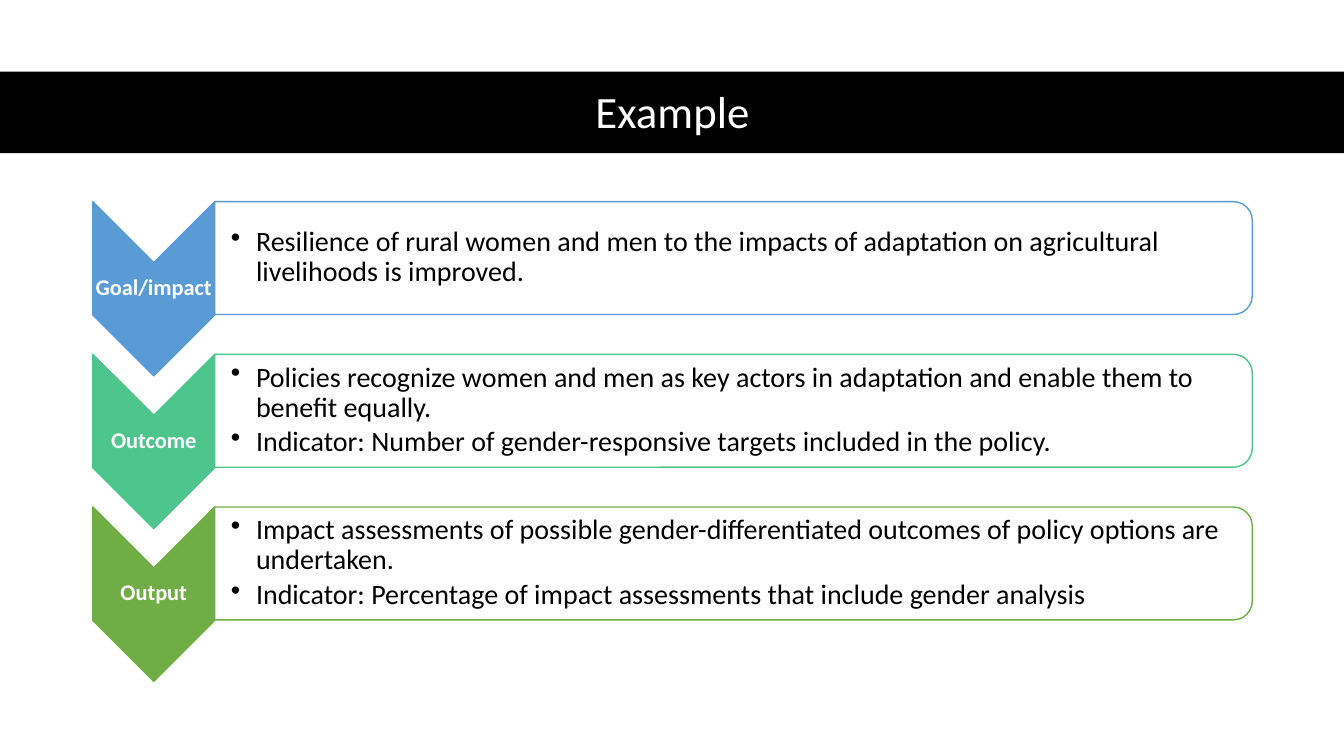
from dataclasses import dataclass

from lxml.etree import SubElement
from pptx import Presentation
from pptx.dml.color import RGBColor
from pptx.enum.shapes import MSO_SHAPE as Shape
from pptx.enum.text import MSO_ANCHOR as Anchor, PP_ALIGN as Align
from pptx.oxml.ns import qn
from pptx.util import Inches, Pt

COLORS = {
    "black": "000000",
    "white": "FFFFFF",
    "blue": "5B9BD5",
    "teal": "4DC58D",
    "green": "70AD47",
}
FONT = "Calibri"
TOP, PITCH = 2.0, 1.515
LEFT, ARROW_W, ARROW_H = 0.92, 1.21, 1.73
PANEL_W, PANEL_H = 10.29, 1.12


@dataclass
class Level:
    label: str
    color: str
    points: list[str]


LEVELS = [
    Level("Goal/impact", "blue", [
        "Resilience of rural women and men to the impacts of adaptation on "
        "agricultural livelihoods is improved.",
    ]),
    Level("Outcome", "teal", [
        "Policies recognize women and men as key actors in adaptation and "
        "enable them to benefit equally.",
        "Indicator: Number of gender-responsive targets included in the policy.",
    ]),
    Level("Output", "green", [
        "Impact assessments of possible gender-differentiated outcomes of "
        "policy options are undertaken.",
        "Indicator: Percentage of impact assessments that include gender analysis",
    ]),
]


def rgb(name: str) -> RGBColor:
    return RGBColor.from_string(COLORS[name])


def add_turned(slide, kind, left: float, top: float, width: float,
               height: float, fill: str, line: str):
    """Add a shape turned by 90 degrees that covers the given box."""
    mid_x, mid_y = left + width / 2, top + height / 2
    shape = slide.shapes.add_shape(
        kind, Inches(mid_x - height / 2), Inches(mid_y - width / 2),
        Inches(height), Inches(width))
    shape.rotation = 90
    shape.shadow.inherit = False
    shape.fill.solid()
    shape.fill.fore_color.rgb = rgb(fill)
    shape.line.color.rgb = rgb(line)
    shape.line.width = Pt(1)
    return shape


def add_text(slide, left: float, top: float, width: float, height: float,
             lines: list[str], size: int, color: str, inset: float = 0.01) -> list:
    box = slide.shapes.add_textbox(
        Inches(left), Inches(top), Inches(width), Inches(height))
    frame = box.text_frame
    frame.word_wrap = True
    frame.vertical_anchor = Anchor.MIDDLE
    frame.margin_left = Inches(inset)
    frame.margin_top = frame.margin_right = frame.margin_bottom = Inches(0.01)
    frame.text = "\n".join(lines)
    for para in frame.paragraphs:
        style(para, size, color)
    return list(frame.paragraphs)


def style(para, size: int, color: str) -> None:
    para.line_spacing = 0.9
    para.font.name = FONT
    para.font.size = Pt(size)
    para.font.color.rgb = rgb(color)


def add_bullet(para) -> None:
    para.space_after = Pt(3)
    props = para._p.get_or_add_pPr()
    props.set("marL", str(Inches(0.25)))
    props.set("indent", str(Inches(-0.25)))
    mark = props.makeelement(qn("a:buChar"), {"char": "•"})
    # Bullets come before the default run properties
    props.insert_element_before(mark, "a:tabLst", "a:defRPr", "a:extLst")


def add_level(slide, level: Level, top: float) -> None:
    # Arrow and its label
    add_turned(slide, Shape.CHEVRON, LEFT, top, ARROW_W, ARROW_H,
               level.color, level.color)
    label, = add_text(slide, LEFT, top + 0.6, ARROW_W, 0.52,
                      [level.label], 16, "white")
    label.alignment = Align.CENTER
    label.font.bold = True

    # Panel and its points
    right = LEFT + ARROW_W
    panel = add_turned(slide, Shape.ROUND_2_SAME_RECTANGLE, right, top,
                       PANEL_W, PANEL_H, "white", level.color)
    tint = panel.fill._xPr.find(qn("a:solidFill"))[0]
    SubElement(tint, qn("a:alpha"), val="90000")
    for para in add_text(slide, right, top + 0.05, 10.24, 1.01,
                         level.points, 20, "black", inset=0.16):
        add_bullet(para)


def add_title(slide) -> None:
    # Black band behind the title
    band = slide.shapes.add_shape(
        Shape.RECTANGLE, 0, Inches(0.71), Inches(13.33), Inches(0.81))
    band.shadow.inherit = False
    band.fill.solid()
    band.fill.fore_color.rgb = rgb("black")
    band.line.fill.background()

    title = slide.shapes.title
    band._element.addnext(title._element)
    title.left, title.top = Inches(0.92), Inches(0.74)
    title.width, title.height = Inches(11.5), Inches(0.78)
    frame = title.text_frame
    frame.text = "Example"
    frame.vertical_anchor = Anchor.MIDDLE
    para = frame.paragraphs[0]
    para.alignment = Align.CENTER
    style(para, 32, "white")


def main() -> None:
    deck = Presentation()
    deck.slide_width, deck.slide_height = Inches(13.33), Inches(7.5)
    slide = deck.slides.add_slide(deck.slide_layouts[5])
    add_title(slide)
    for row, level in enumerate(LEVELS):
        add_level(slide, level, TOP + row * PITCH)
    deck.save("out.pptx")


if __name__ == "__main__":
    main()
